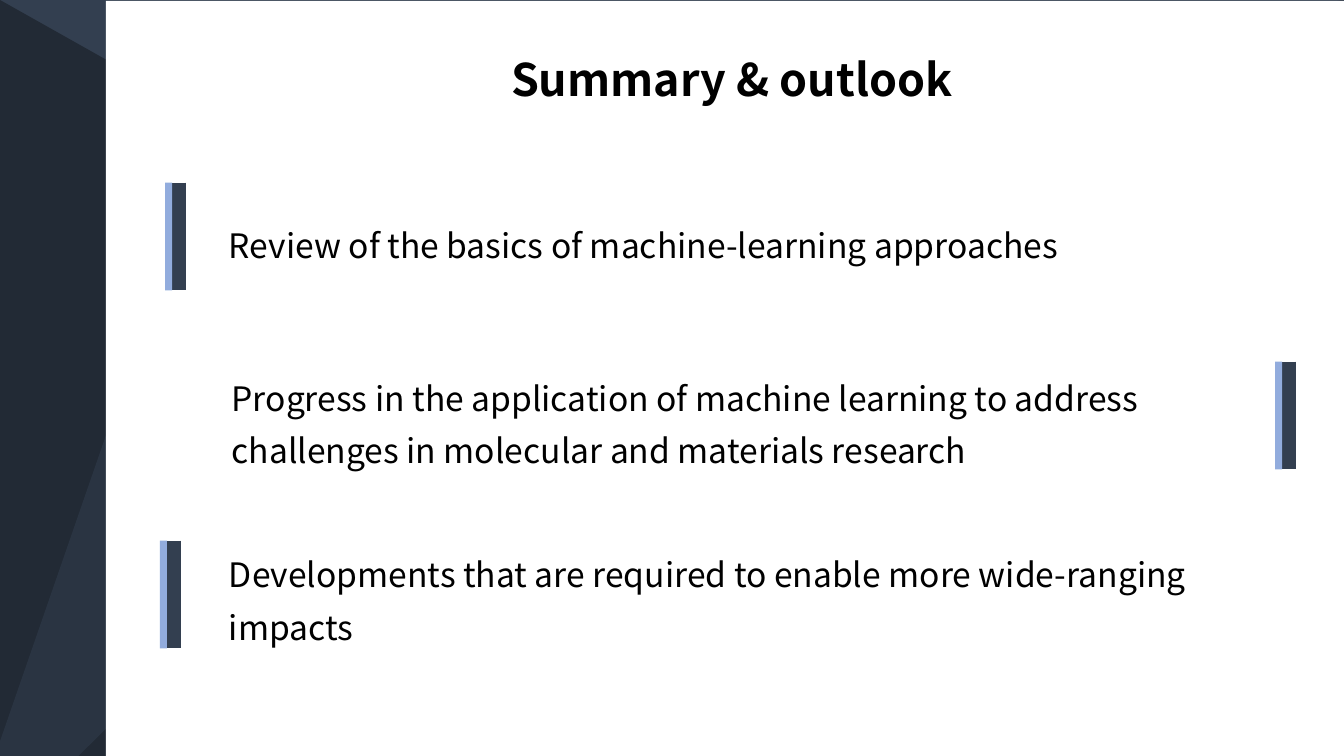
"""Build the summary and outlook slide."""

import dataclasses
from typing import Optional

import lxml.etree
import pptx
import pptx.dml.color
import pptx.enum.shapes
import pptx.enum.text
import pptx.oxml.ns
import pptx.util

Cm = pptx.util.Cm
Shape = pptx.enum.shapes.MSO_SHAPE
Align = pptx.enum.text.PP_ALIGN


@dataclasses.dataclass(frozen=True)
class Theme:
    """Colours, font and type sizes of the slide."""

    background: str = "333F50"
    dark: str = "222A35"
    accent: str = "8FAADC"
    panel: str = "FFFFFF"
    text: str = "000000"
    font: str = "Noto Sans CJK SC"
    title_size: int = 32
    body_size: int = 24
    wide_line: int = 10
    narrow_line: int = 5


@dataclasses.dataclass(frozen=True)
class Box:
    """Position and size in centimetres."""

    left: float
    top: float
    width: float
    height: float

    def lengths(self) -> tuple:
        """Return the four values as slide lengths."""
        return Cm(self.left), Cm(self.top), Cm(self.width), Cm(self.height)


@dataclasses.dataclass(frozen=True)
class Facet:
    """Filled shape of the backdrop."""

    kind: Shape
    box: Box
    color: str
    rotation: float = 0
    adjustment: Optional[float] = None
    opacity: int = 100


@dataclasses.dataclass(frozen=True)
class Point:
    """Summary statement with the position of its marker bar."""

    text: str
    box: Box
    bar_left: float


THEME = Theme()
SLIDE = Box(0, 0, 33.87, 19.05)
FACETS = (
    Facet(Shape.ISOSCELES_TRIANGLE, SLIDE, THEME.dark, adjustment=0),
    Facet(Shape.PARALLELOGRAM, Box(-1.8, 4.27, 37.44, 10.49), THEME.dark, 346.3, opacity=50),
    Facet(Shape.ISOSCELES_TRIANGLE, Box(3, -2.95, 13.74, 28.24), THEME.background, 199.1, 1, 50),
    Facet(Shape.RECTANGLE, Box(2.67, 0.02, 31.26, 19.05), THEME.panel),
)
TITLE_BOX = Box(10.46, 1.17, 16.23, 1.62)
POINTS = (
    Point("Review of the basics of machine-learning approaches",
          Box(5.59, 5.26, 27.25, 1.4), 4.52),
    Point("Progress in the application of machine learning to address "
          "challenges in molecular and materials research",
          Box(5.66, 9.12, 27.25, 2.72), 32.49),
    Point("Developments that are required to enable more wide-ranging impacts",
          Box(5.59, 13.56, 25.68, 2.72), 4.39),
)
BAR_TOP, BAR_PITCH, BAR_HEIGHT, ACCENT_OFFSET = 4.6, 4.51, 2.72, 0.27


def rgb(color: str) -> pptx.dml.color.RGBColor:
    """Convert a hexadecimal colour."""
    return pptx.dml.color.RGBColor.from_string(color)


def set_opacity(fill_parent, percent: int) -> None:
    """Set the opacity of a solid fill held by an XML element."""
    color = fill_parent.find(pptx.oxml.ns.qn("a:solidFill"))[0]
    alpha = lxml.etree.SubElement(color, pptx.oxml.ns.qn("a:alpha"))
    alpha.set("val", str(percent * 1000))


def add_facet(slide, facet: Facet) -> None:
    """Draw one backdrop shape."""
    shape = slide.shapes.add_shape(facet.kind, *facet.box.lengths())
    shape.shadow.inherit = False
    shape.rotation = facet.rotation
    if facet.adjustment is not None:
        shape.adjustments[0] = facet.adjustment
    shape.fill.solid()
    shape.fill.fore_color.rgb = rgb(facet.color)
    shape.line.fill.background()
    if facet.opacity < 100:
        set_opacity(shape.element.spPr, facet.opacity)


def add_text(slide, text: str, box: Box, size: int, align: Align = Align.LEFT,
             bold: bool = False, spacing: float = 1, insets: tuple = (0.25, 0.13)) -> None:
    """Draw a text box with one paragraph."""
    text_frame = slide.shapes.add_textbox(*box.lengths()).text_frame
    text_frame.word_wrap = True
    text_frame.auto_size = pptx.enum.text.MSO_AUTO_SIZE.SHAPE_TO_FIT_TEXT
    text_frame.margin_left = text_frame.margin_right = Cm(insets[0])
    text_frame.margin_top = text_frame.margin_bottom = Cm(insets[1])
    text_frame.text = text
    paragraph = text_frame.paragraphs[0]
    paragraph.alignment = align
    paragraph.line_spacing = spacing
    font = paragraph.runs[0].font
    font.name = THEME.font
    font.size = pptx.util.Pt(size)
    font.bold = bold
    font.color.rgb = rgb(THEME.text)
    east_asian = lxml.etree.SubElement(
        paragraph.runs[0].font._element, pptx.oxml.ns.qn("a:ea"))
    east_asian.set("typeface", THEME.font)


def add_line(slide, left: float, top: float, color: str, width: int, opacity: int = 100) -> None:
    """Draw one vertical line of a marker bar."""
    connector = slide.shapes.add_connector(
        pptx.enum.shapes.MSO_CONNECTOR.STRAIGHT,
        Cm(left), Cm(top), Cm(left), Cm(top + BAR_HEIGHT))
    connector.line.color.rgb = rgb(color)
    connector.line.width = pptx.util.Pt(width)
    if opacity < 100:
        set_opacity(connector.line._ln, opacity)
    lxml.etree.SubElement(connector.element.spPr, pptx.oxml.ns.qn("a:effectLst"))


def add_point(slide, point: Point, bar_top: float) -> None:
    """Draw a statement and its two-tone marker bar."""
    add_line(slide, point.bar_left, bar_top, THEME.background, THEME.wide_line)
    add_line(slide, point.bar_left - ACCENT_OFFSET, bar_top,
             THEME.accent, THEME.narrow_line, 96)
    add_text(slide, point.text, point.box, THEME.body_size, spacing=1.3, insets=(0.18, 0.1))


def main() -> None:
    """Create and save the presentation."""
    presentation = pptx.Presentation()
    presentation.slide_width, presentation.slide_height = SLIDE.lengths()[2:]
    slide = presentation.slides.add_slide(presentation.slide_layouts[6])
    slide.background.fill.solid()
    slide.background.fill.fore_color.rgb = rgb(THEME.background)
    for facet in FACETS:
        add_facet(slide, facet)
    add_text(slide, "Summary & outlook ", TITLE_BOX, THEME.title_size, Align.CENTER, bold=True)
    for index, point in enumerate(POINTS):
        add_point(slide, point, BAR_TOP + index * BAR_PITCH)
    presentation.save("out.pptx")


if __name__ == "__main__":
    main()
